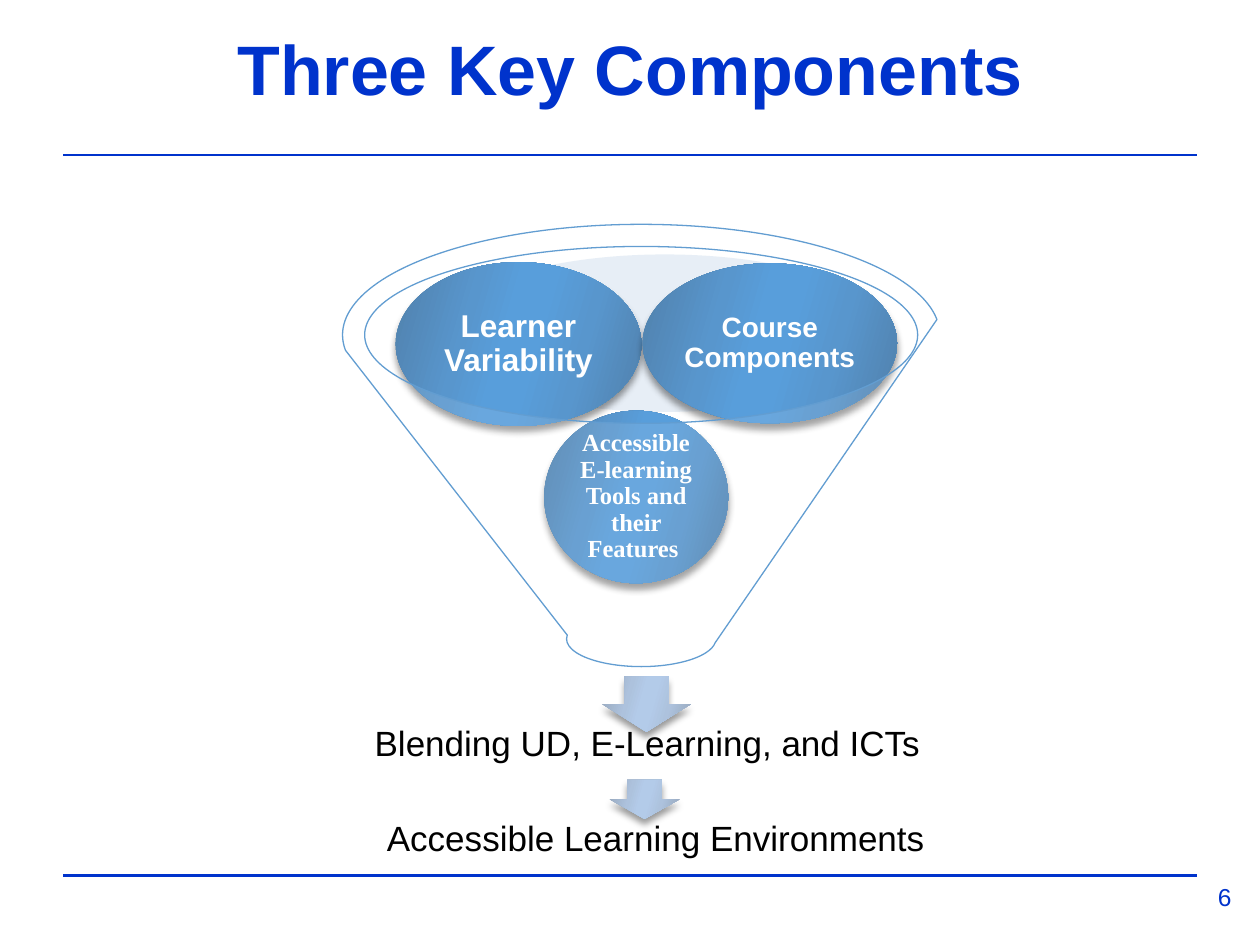
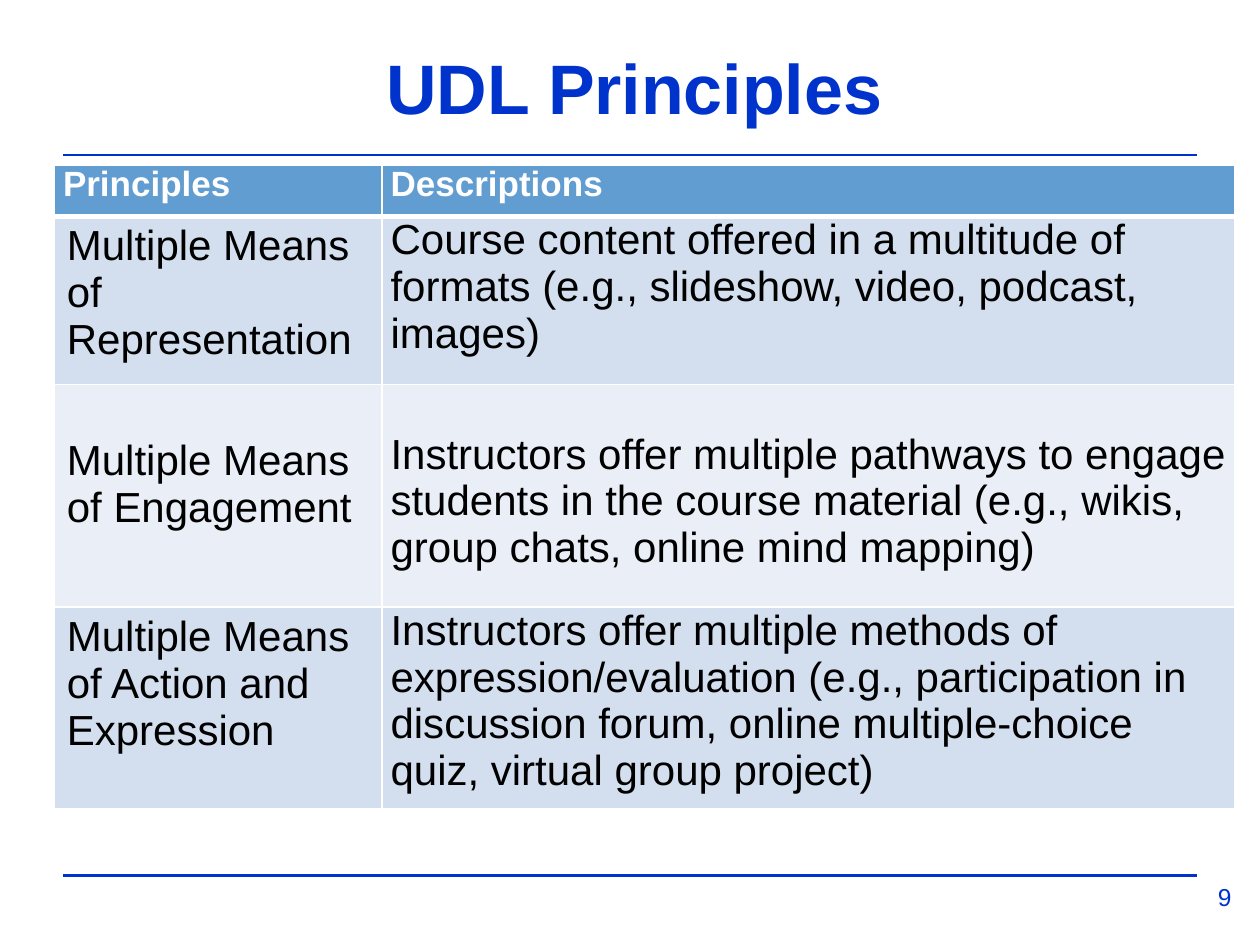
"""Build two slides: the funnel of key components and the table of UDL principles."""
from lxml import etree
from pptx import Presentation
from pptx.dml.color import RGBColor
from pptx.enum.shapes import MSO_CONNECTOR, MSO_SHAPE
from pptx.enum.text import MSO_ANCHOR, MSO_AUTO_SIZE, PP_ALIGN
from pptx.oxml import parse_xml
from pptx.oxml.ns import nsdecls, qn
from pptx.util import Pt

BLUE, WHITE, BLACK = "0033CC", "FFFFFF", "000000"
TABLE_BLUE, BAND, BAND_LIGHT = "629DD1", "D3DFEE", "EAEFF7"
BALL = ("5080AB", "5896CD", "589EDB")
ARROW = ("96A7BB", "ADC2DD", "B3CBE9")
STOPS = (0, 30, 45, 55, 73, 100)


def rgb(value):
    return RGBColor.from_string(value)


def write(tf, text, size, color, bold=False, align=PP_ALIGN.CENTER, font="Arial"):
    tf.word_wrap = True
    tf.text = text
    p = tf.paragraphs[0]
    p.alignment = align
    f = p.runs[0].font
    f.name, f.size, f.bold = font, Pt(size), bold
    f.color.rgb = rgb(color)
    return p


prs = Presentation()
prs.slide_width, prs.slide_height = Pt(720), Pt(540)

pages = [
    ("Three Key Components", "6", (36, 12.2, 648, 54)),
    ("UDL Principles", "9", (19.4, 31.7, 686.2, 45.4)),
]
for title, number, box in pages:
    s = prs.slides.add_slide(prs.slide_layouts[5])
    for y in (500.4, 88.6):
        rule = s.shapes.add_connector(MSO_CONNECTOR.STRAIGHT, Pt(36), Pt(y), Pt(684), Pt(y))
        rule.line.color.rgb = rgb(BLUE)
        rule.line.width = Pt(1.5)
        etree.SubElement(rule._element.spPr, qn("a:effectLst"))
    sp = s.shapes.title
    sp.left, sp.top, sp.width, sp.height = [Pt(v) for v in box]
    write(sp.text_frame, title, 40, BLUE, bold=True)
    sp.text_frame.auto_size = MSO_AUTO_SIZE.NONE
    sp.text_frame.vertical_anchor = MSO_ANCHOR.BOTTOM
    sp = s.shapes.add_textbox(Pt(679.7), Pt(500.4), Pt(40.3), Pt(30.2))
    write(sp.text_frame, number, 14, BLUE)

funnel_slide, table_slide = prs.slides

figures = [
    (MSO_SHAPE.OVAL, (250.6, 145.4, 258.5, 90), ("C5D5E9", 40), None, None),
    (MSO_SHAPE.DOWN_ARROW, (344.2, 386.6, 50.4, 31.7), ARROW, None, None),
    (MSO_SHAPE.OVAL, (311, 234.7, 105.1, 98.6), BALL, None,
     ("Accessible E-learning Tools and their Features ", 14, "Times New Roman")),
    (MSO_SHAPE.OVAL, (226.1, 149.8, 140.4, 93.6), BALL, None,
     ("Learner Variability", 18, "Arial")),
    (MSO_SHAPE.OVAL, (367.2, 150.5, 145.4, 91.4), BALL, None,
     ("Course Components", 16, "Arial")),
    (MSO_SHAPE.FUNNEL, (195.8, 128.2, 341.3, 252.7), (WHITE, 10), TABLE_BLUE, None),
    (MSO_SHAPE.DOWN_ARROW, (348.5, 445.7, 39.6, 22.3), ARROW, None, None),
]
for preset, box, fill, outline, label in figures:
    sp = funnel_slide.shapes.add_shape(preset, *[Pt(v) for v in box])
    sp.shadow.inherit = False
    if outline:
        sp.line.color.rgb = rgb(outline)
        sp.line.width = Pt(0.75)
    else:
        sp.line.fill.background()
    spPr = sp._element.spPr
    if len(fill) == 2:
        color, opacity = fill
        sp.fill.solid()
        sp.fill.fore_color.rgb = rgb(color)
        clr = spPr.find(qn("a:solidFill")).find(qn("a:srgbClr"))
        etree.SubElement(clr, qn("a:alpha"), val=str(opacity * 1000))
    else:
        sp.fill.background()
        stops = "".join(f'<a:gs pos="{pos * 1000}"><a:srgbClr val="{c}"/></a:gs>'
                        for pos, c in zip(STOPS, fill + fill[::-1]))
        spPr.replace(spPr.find(qn("a:noFill")), parse_xml(
            f'<a:gradFill {nsdecls("a")} rotWithShape="1"><a:gsLst>{stops}</a:gsLst>'
            '<a:lin ang="960000" scaled="0"/></a:gradFill>'))
        spPr.find(qn("a:effectLst")).append(parse_xml(
            f'<a:outerShdw {nsdecls("a")} blurRad="50800" dist="43180" dir="5400000" '
            f'rotWithShape="0"><a:srgbClr val="{BLACK}"><a:alpha val="40000"/>'
            '</a:srgbClr></a:outerShdw>'))
    if label:
        text, size, font = label
        tf = sp.text_frame
        write(tf, text, size, WHITE, bold=True, font=font).line_spacing = 0.9
        tf.vertical_anchor = MSO_ANCHOR.MIDDLE
        tf.margin_left = tf.margin_right = tf.margin_top = tf.margin_bottom = Pt(1.5)

sp = funnel_slide.shapes.add_textbox(Pt(167), Pt(387.4), Pt(406.1), Pt(59.8))
tf = sp.text_frame
write(tf, "Blending UD, E-Learning, and ICTs", 20, BLACK).line_spacing = 0.9
tf.vertical_anchor = MSO_ANCHOR.BOTTOM
tf.margin_left = tf.margin_right = tf.margin_top = tf.margin_bottom = Pt(11.5)
sp = funnel_slide.shapes.add_textbox(Pt(162), Pt(463), Pt(425.5), Pt(28.1))
write(sp.text_frame, "Accessible Learning Environments", 20, BLACK)

rows = [
    ("Principles", "Descriptions"),
    ("Multiple Means of Representation",
     "Course content offered in a multitude of formats (e.g., slideshow, video, podcast, images)"),
    ("Multiple Means of Engagement",
     "Instructors offer multiple pathways to engage students in the course material "
     "(e.g., wikis, group chats, online mind mapping)"),
    ("Multiple Means of Action and Expression",
     "Instructors offer multiple methods of expression/evaluation (e.g., participation in "
     "discussion forum, online multiple-choice quiz, virtual group project)"),
]
fills = (TABLE_BLUE, BAND, BAND_LIGHT, BAND)
heights = (29.5, 95.8, 127.4, 107)
table = table_slide.shapes.add_table(
    4, 2, Pt(31), Pt(94.3), Pt(674.6), Pt(sum(heights))).table
table.horz_banding = False
table.columns[0].width, table.columns[1].width = Pt(187.2), Pt(487.4)
for i, texts in enumerate(rows):
    table.rows[i].height = Pt(heights[i])
    for j, text in enumerate(texts):
        cell = table.cell(i, j)
        header = i == 0
        roomy = j == 0 and not header
        cell.margin_left = cell.margin_right = Pt(7.2 if roomy else 5)
        cell.margin_bottom = Pt(3.6 if roomy else 0)
        cell.margin_top = Pt((3.6 if roomy else 0) + (26.8 if i == 2 else 0))
        write(cell.text_frame, text, 20 if header else 24, WHITE if header else BLACK,
              bold=header, align=PP_ALIGN.LEFT)
        tcPr = cell._tc.get_or_add_tcPr()
        for side in "LRTB":
            thick = (side, i) in (("B", 0), ("T", 1))
            tcPr.append(parse_xml(
                f'<a:ln{side} {nsdecls("a")} w="{Pt(3 if thick else 1)}"><a:solidFill>'
                f'<a:srgbClr val="{WHITE}"/></a:solidFill></a:ln{side}>'))
        cell.fill.solid()
        cell.fill.fore_color.rgb = rgb(fills[i])

prs.save("out.pptx")
